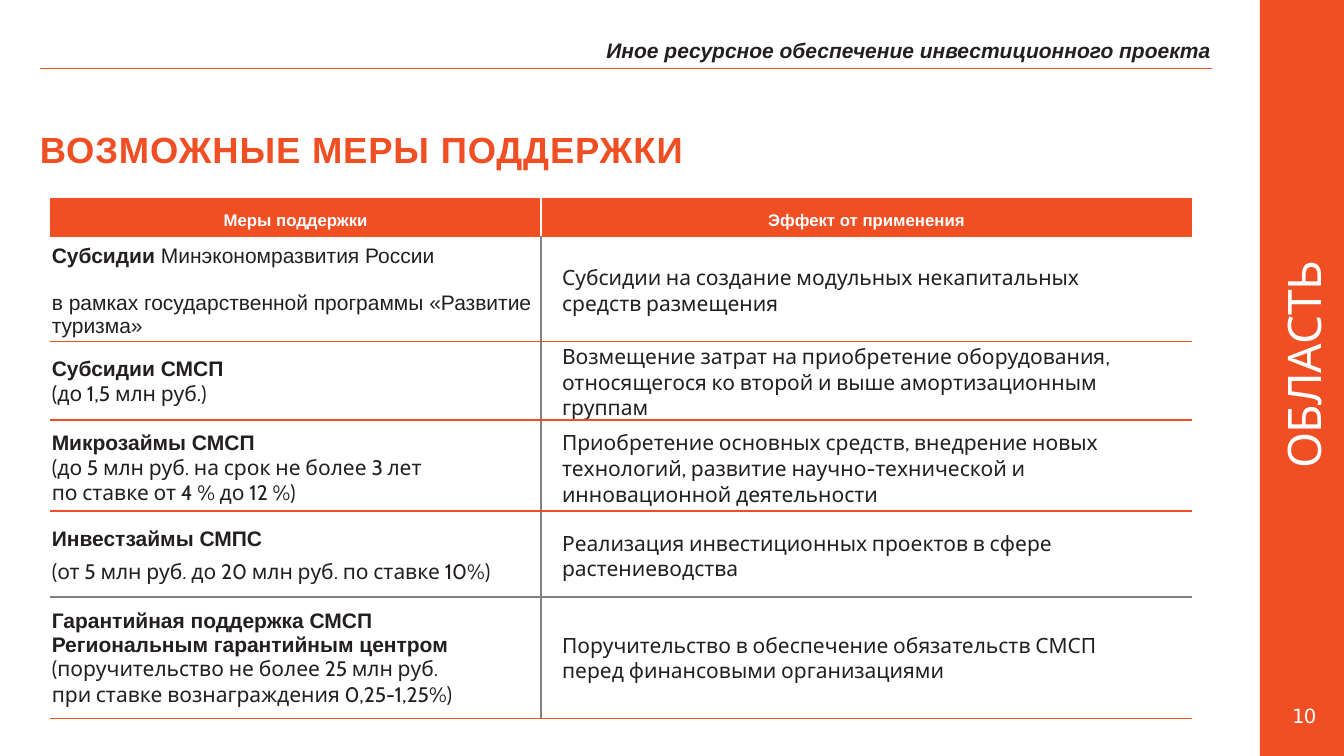
from lxml import etree
from pptx import Presentation
from pptx.dml.color import RGBColor
from pptx.enum.shapes import MSO_CONNECTOR, MSO_SHAPE
from pptx.enum.text import MSO_ANCHOR, PP_ALIGN
from pptx.oxml.ns import qn
from pptx.util import Pt

LEFT, CENTER, RIGHT = PP_ALIGN.LEFT, PP_ALIGN.CENTER, PP_ALIGN.RIGHT
MIDDLE = MSO_ANCHOR.MIDDLE
RECT = MSO_SHAPE.RECTANGLE
STRAIGHT = MSO_CONNECTOR.STRAIGHT
ORANGE, DARK, WHITE, GREY = "F04E23", "231F20", "FFFFFF", "808080"
COLS = [350.5, 465]
ROW_HEIGHTS = [27, 75, 56, 65, 61.5, 86.5]
TOP_MARGINS = [4, 3, 2, 5, 3.5, 1.5]
RULES = [(ORANGE, 1), (ORANGE, 1), (ORANGE, 1), (ORANGE, 1.5), (GREY, 1), (ORANGE, 1)]
HEADER = ["Меры поддержки", "Эффект от применения"]
MEASURES = [
    ([[("Субсидии ", "Arial", True), ("Минэкономразвития России", "Arial", False)],
      [("в рамках государственной программы «Развитие туризма»", "Arial", False)]], 17,
     "Субсидии на создание модульных некапитальных средств размещения"),
    ([[("Субсидии СМСП\n", "Arial", True), ("(до 1,5 млн руб.)", "Cabin", False)]], 0,
     "Возмещение затрат на приобретение оборудования, относящегося ко второй "
     "и выше амортизационным группам"),
    ([[("Микрозаймы СМСП\n", "Arial", True),
       ("(до 5 млн руб. на срок не более 3 лет\nпо ставке от 4 % до 12 %)", "Cabin", False)]], 0,
     "Приобретение основных средств, внедрение новых технологий, развитие "
     "научно-технической и инновационной деятельности"),
    ([[("Инвестзаймы СМПС", "Arial", True)],
      [("(от 5 млн руб. до 20 млн руб. по ставке 10%)", "Cabin", False)]], 6,
     "Реализация инвестиционных проектов в сфере растениеводства"),
    ([[("Гарантийная поддержка СМСП\nРегиональным гарантийным центром\n", "Arial", True),
       ("(поручительство не более 25 млн руб.\nпри ставке вознаграждения 0,25-1,25%)",
        "Cabin", False)]], 0,
     "Поручительство в обеспечение обязательств СМСП перед финансовыми организациями"),
]


def rgb(color):
    return RGBColor.from_string(color)


class Deck:
    """Holds the presentation, its current slide and the drawing style."""

    def __init__(self):
        self.prs = Presentation()
        self.prs.slide_width, self.prs.slide_height = Pt(960), Pt(540)
        self.s = self.prs.slides.add_slide(self.prs.slide_layouts[6])

    def font(self, p, name, size, color, bold=False, italic=False):
        f = p.font
        f.name, f.size, f.bold, f.italic = name, Pt(size), bold, italic
        f.color.rgb = rgb(color)

    def bar(self, x, y, w, h, color):
        sp = self.s.shapes.add_shape(RECT, Pt(x), Pt(y), Pt(w), Pt(h))
        sp.shadow.inherit = False
        sp.fill.solid()
        sp.fill.fore_color.rgb = rgb(color)
        sp.line.fill.background()

    def line(self, x1, y1, x2, y2, color, width):
        cn = self.s.shapes.add_connector(STRAIGHT, Pt(x1), Pt(y1), Pt(x2), Pt(y2))
        cn.line.color.rgb = rgb(color)
        cn.line.width = Pt(width)
        etree.SubElement(cn._element.spPr, qn("a:effectLst"))

    def text(self, x, y, w, h, text, name, size, color, bold=False, italic=False,
             align=LEFT, spacing=0, rotation=0):
        sp = self.s.shapes.add_textbox(Pt(x), Pt(y), Pt(w), Pt(h))
        sp.rotation = rotation
        tf = sp.text_frame
        tf.word_wrap = True
        tf.margin_left = tf.margin_right = tf.margin_bottom = 0
        tf.margin_top = Pt(1)
        if rotation:
            tf.vertical_anchor = MIDDLE
        p = tf.paragraphs[0]
        p.alignment = align
        r = p.add_run()
        r.text = text
        if spacing:
            r._r.get_or_add_rPr().set("spc", str(int(spacing * 100)))
        self.font(p, name, size, color, bold, italic)

    def borders(self, cell, edges):
        tcPr = cell._tc.get_or_add_tcPr()
        for i, side in enumerate(("lnL", "lnR", "lnT", "lnB")):
            ln = etree.Element(qn("a:" + side))
            color, width = edges.get(side, (None, 0))
            ln.set("w", str(int(Pt(width))))
            if color:
                fill = etree.SubElement(ln, qn("a:solidFill"))
                etree.SubElement(fill, qn("a:srgbClr")).set("val", color)
            else:
                etree.SubElement(ln, qn("a:noFill"))
            tcPr.insert(i, ln)

    def rich(self, tf, paragraphs, gap):
        for i, parts in enumerate(paragraphs):
            p = tf.add_paragraph() if i else tf.paragraphs[0]
            if i:
                p.space_before = Pt(gap)
            for text, name, bold in parts:
                for j, piece in enumerate(text.split("\n")):
                    if j:
                        p.add_line_break()
                    if piece:
                        r = p.add_run()
                        r.text = piece
                        r.font.name, r.font.bold = name, bold
            self.font(p, parts[0][1], 15, DARK, parts[0][2])

    def table(self, x, y):
        tbl = self.s.shapes.add_table(len(ROW_HEIGHTS), len(COLS), Pt(x), Pt(y),
                                      Pt(sum(COLS)), Pt(sum(ROW_HEIGHTS))).table
        tbl.first_row = tbl.horz_banding = False
        for column, width in zip(tbl.columns, COLS):
            column.width = Pt(width)
        for i, (row, height) in enumerate(zip(tbl.rows, ROW_HEIGHTS)):
            row.height = Pt(height)
            for j, cell in enumerate(row.cells):
                cell.vertical_anchor = MIDDLE
                cell.margin_top, cell.margin_bottom = Pt(TOP_MARGINS[i]), 0
                cell.margin_left = Pt(15 if i and j else 1)
                cell.margin_right = Pt(43 if i and j else 1)
                if i == 0:
                    cell.fill.solid()
                    cell.fill.fore_color.rgb = rgb(ORANGE)
                    p = cell.text_frame.paragraphs[0]
                    p.text = HEADER[j]
                    p.alignment = CENTER
                    self.font(p, "Arial", 12, WHITE, True)
                else:
                    cell.fill.background()
                    measure, gap, effect = MEASURES[i - 1]
                    paragraphs = [[(effect, "Cabin", False)]] if j else measure
                    self.rich(cell.text_frame, paragraphs, gap)
                self.borders(cell, {"lnL" if j else "lnR": (GREY if i else WHITE, 1),
                                    "lnT": RULES[max(i - 1, 0)], "lnB": RULES[i]})


def main():
    deck = Deck()
    deck.bar(900, 0, 60, 540, ORANGE)
    deck.text(845, 236.5, 170, 48, "ОБЛАСТЬ", "Cabin", 33, WHITE,
              align=CENTER, spacing=-0.5, rotation=270)
    deck.text(28.5, 90, 470, 33, "ВОЗМОЖНЫЕ МЕРЫ ПОДДЕРЖКИ", "Arial", 26, ORANGE,
              bold=True, spacing=0.6)
    deck.text(425, 26, 440, 20, "Иное ресурсное обеспечение инвестиционного проекта",
              "Arial", 15, DARK, bold=True, italic=True, align=RIGHT)
    deck.line(28.5, 49, 866, 49, ORANGE, 0.5)
    deck.table(36, 142)
    deck.text(923, 502, 20, 21, "10", "DejaVu Sans", 14, WHITE, spacing=-0.5)
    deck.prs.save("out.pptx")


if __name__ == "__main__":
    main()
